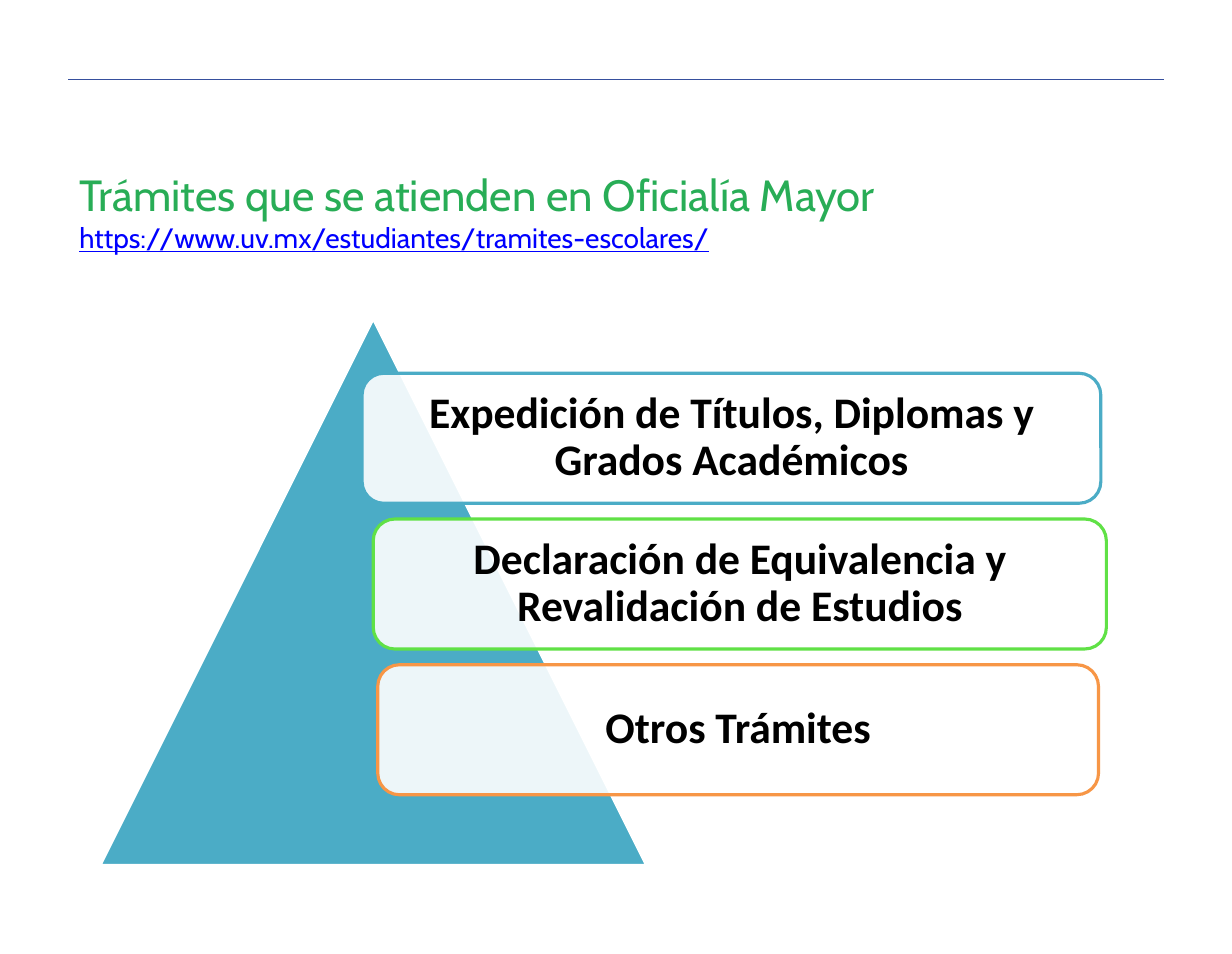
from lxml import etree
from pptx import Presentation
from pptx.dml.color import RGBColor
from pptx.enum.shapes import MSO_CONNECTOR, MSO_SHAPE
from pptx.enum.text import MSO_ANCHOR, PP_ALIGN
from pptx.oxml.ns import qn
from pptx.util import Inches, Pt

TRIANGLE = MSO_SHAPE.ISOSCELES_TRIANGLE
ROUND = MSO_SHAPE.ROUNDED_RECTANGLE
STRAIGHT = MSO_CONNECTOR.STRAIGHT
MIDDLE = MSO_ANCHOR.MIDDLE
LEFT, CENTER = PP_ALIGN.LEFT, PP_ALIGN.CENTER

COLORS = {
    "white": "FFFFFF", "black": "000000", "rule": "364F9D", "title": "28AD56",
    "link": "0000FF", "teal": "4BACC6", "lime": "60E146", "orange": "F79646",
}

# Text, outline colour, left, width
CARDS = [
    ("Expedición de Títulos, Diplomas y Grados Académicos", "teal", 3.23, 6.59),
    ("Declaración de Equivalencia y Revalidación de Estudios", "lime", 3.33, 6.54),
    ("Otros Trámites", "orange", 3.37, 6.43),
]
CARD_TOP, CARD_STEP, CARD_HIGH = 3.33, 1.3, 1.16


def color(name):
    return RGBColor.from_string(COLORS[name])


def write(para, text, font="Calibri", size=28, ink="black", bold=False, under=False):
    """Add a formatted run to a paragraph."""
    run = para.add_run()
    run.text = text
    run.font.name = font
    run.font.size = Pt(size)
    run.font.bold = bold
    run.font.underline = under
    run.font.color.rgb = color(ink)


class Deck:
    def __init__(self, wide, high):
        self.show = Presentation()
        self.show.slide_width = Inches(wide)
        self.show.slide_height = Inches(high)
        self.slide = self.show.slides.add_slide(self.show.slide_layouts[6])

    def rule(self, left, right, top):
        line = self.slide.shapes.add_connector(
            STRAIGHT, Inches(left), Inches(top), Inches(right), Inches(top))
        line.line.color.rgb = color("rule")
        line.line.width = Pt(0.75)
        etree.SubElement(line._element.spPr, qn("a:effectLst"))

    def shape(self, kind, left, top, wide, high, fill, edge, alpha=None):
        """Add a preset shape; alpha is its opacity in percent."""
        shape = self.slide.shapes.add_shape(
            kind, Inches(left), Inches(top), Inches(wide), Inches(high))
        shape.shadow.inherit = False
        shape.fill.solid()
        shape.fill.fore_color.rgb = color(fill)
        shape.line.color.rgb = color(edge)
        shape.line.width = Pt(2)
        if alpha is not None:
            tint = shape._element.spPr.find(qn("a:solidFill"))[0]
            etree.SubElement(tint, qn("a:alpha")).set("val", str(alpha * 1000))
        return shape

    def frame(self, shape, align, inset=None):
        """Prepare the text frame of a shape and return its first paragraph."""
        frame = shape.text_frame
        frame.word_wrap = True
        frame.vertical_anchor = MIDDLE
        if inset is not None:
            frame.margin_left = frame.margin_right = Inches(inset)
            frame.margin_top = frame.margin_bottom = Inches(inset)
        para = frame.paragraphs[0]
        para.alignment = align
        return para

    def title(self, text, link, left, top, wide, high):
        box = self.slide.shapes.add_textbox(
            Inches(left), Inches(top), Inches(wide), Inches(high))
        para = self.frame(box, LEFT)
        write(para, text, font="Cabin", ink="title")
        para.add_line_break()
        write(para, link, font="Cabin", size=18, ink="link", under=True)

    def card(self, text, edge, left, top, wide, high):
        shape = self.shape(ROUND, left, top, wide, high, "white", edge, alpha=90)
        para = self.frame(shape, CENTER, inset=0.12)
        para.line_spacing = 0.9
        write(para, text, bold=True)


def main():
    deck = Deck(10.99, 8.51)
    deck.rule(0.61, 10.38, 0.71)
    deck.title("Trámites que se atienden en Oficialía Mayor",
               "https://www.uv.mx/estudiantes/tramites-escolares/",
               0.61, 1.65, 9.65, 0.47)
    deck.shape(TRIANGLE, 0.89, 2.84, 4.88, 4.88, "teal", "white")
    for row, (text, edge, left, wide) in enumerate(CARDS):
        deck.card(text, edge, left, CARD_TOP + row * CARD_STEP, wide, CARD_HIGH)
    deck.show.save("out.pptx")


if __name__ == "__main__":
    main()
